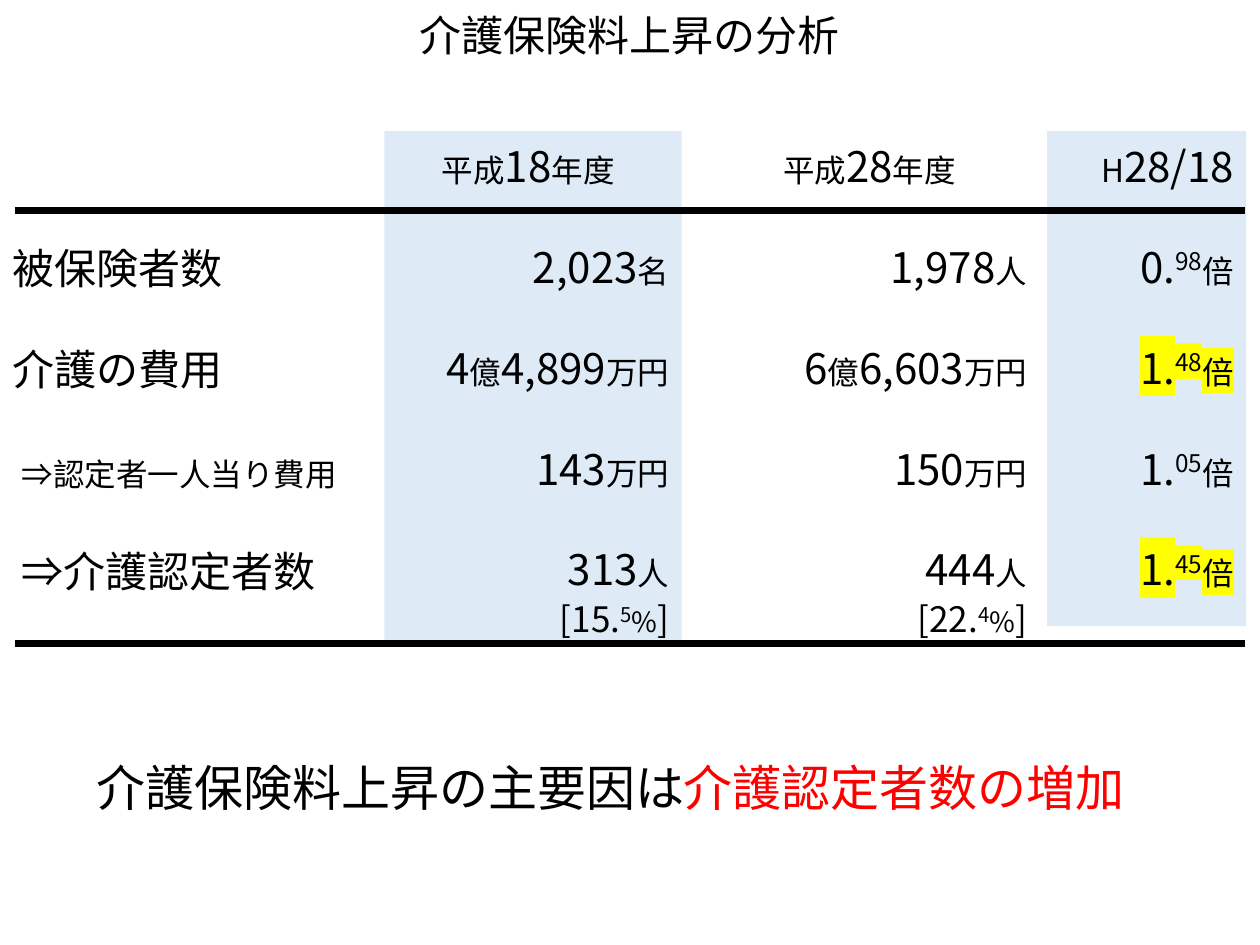
from lxml import etree
from pptx import Presentation
from pptx.dml.color import RGBColor
from pptx.enum import shapes, text
from pptx.oxml import ns
from pptx.util import Pt

BLACK = RGBColor(0, 0, 0)
RED = RGBColor(255, 0, 0)
BLUE = RGBColor(222, 235, 247)
YELLOW = RGBColor(255, 255, 0)
LEFT, MID, RIGHT = text.PP_ALIGN.LEFT, text.PP_ALIGN.CENTER, text.PP_ALIGN.RIGHT
BIG, SMALL = 24, 18


class Page:
    font = "Noto Sans CJK JP"
    lead = 28.8

    def __init__(self, slide):
        self.slide = slide

    def run(self, par, words, size, color=BLACK, mark=None, base=0):
        run = par.add_run()
        run.text = words
        run.font.size = Pt(size)
        run.font.color.rgb = color
        run.font.name = self.font
        props = run._r.get_or_add_rPr()
        east = etree.Element(ns.qn("a:ea"), typeface=self.font)
        props.find(ns.qn("a:latin")).addnext(east)
        if base:
            props.set("baseline", str(base * 1000))
        if mark:
            high = etree.Element(ns.qn("a:highlight"))
            etree.SubElement(high, ns.qn("a:srgbClr"), val=str(mark))
            props.find(ns.qn("a:solidFill")).addnext(high)

    def fill(self, shape, rows, align=LEFT, lead=lead):
        frame = shape.text_frame
        frame.word_wrap = True
        frame.auto_size = text.MSO_AUTO_SIZE.NONE
        frame.vertical_anchor = text.MSO_ANCHOR.TOP
        frame.margin_left = frame.margin_right = Pt(7.2)
        frame.margin_top, frame.margin_bottom = Pt(5.5), Pt(0)
        for i, runs in enumerate(rows):
            par = frame.paragraphs[0] if i == 0 else frame.add_paragraph()
            par.alignment = align
            par.line_spacing = Pt(lead)
            par.space_before = Pt(lead if i else 0)
            for item in runs:
                self.run(par, *item)
        return frame

    def title(self, box, words):
        shape = self.slide.shapes.title
        shape.left, shape.top, shape.width, shape.height = map(Pt, box)
        self.fill(shape, [[(words, BIG)]], MID)

    def label(self, box, rows, lead=lead):
        self.fill(self.slide.shapes.add_textbox(*map(Pt, box)), rows, lead=lead)

    def column(self, box, rows, head=MID, shade=None, share=None):
        if shade:
            shape = self.slide.shapes.add_shape(
                shapes.MSO_SHAPE.RECTANGLE, *map(Pt, box))
            shape.shadow.inherit = False
            shape.fill.solid()
            shape.fill.fore_color.rgb = shade
            shape.line.fill.background()
        else:
            shape = self.slide.shapes.add_textbox(*map(Pt, box))
        frame = self.fill(shape, rows, RIGHT)
        frame.paragraphs[0].alignment = head
        if share:
            whole, part = share
            par = frame.add_paragraph()
            par.alignment = RIGHT
            par.line_spacing = Pt(26)
            self.run(par, f"[{whole}.", 20)
            self.run(par, part, 20, base=30)
            self.run(par, "%", 16)
            self.run(par, "]", 20)

    def rule(self, y):
        line = self.slide.shapes.add_connector(
            shapes.MSO_CONNECTOR.STRAIGHT, Pt(8.64), Pt(y), Pt(711.36), Pt(y))
        line.line.color.rgb = BLACK
        line.line.width = Pt(4)
        etree.SubElement(line._element.spPr, ns.qn("a:effectLst"))


def year(num, tail="年度"):
    return [("平成", SMALL), (num, BIG), (tail, SMALL)]


def count(*parts):
    return [(part, BIG if i % 2 == 0 else SMALL) for i, part in enumerate(parts)]


def ratio(part, whole="1.", mark=None):
    return [(whole, BIG, BLACK, mark), (part, BIG, BLACK, mark, 30),
            ("倍", SMALL, BLACK, mark)]


def main():
    deck = Presentation()
    deck.slide_width, deck.slide_height = Pt(720), Pt(540)
    page = Page(deck.slides.add_slide(deck.slide_layouts[5]))
    top = 74.88

    page.title((0, 0, 720, 36), "介護保険料上昇の分析")
    page.label((0, 133.2, 216, 211), [
        [("被保険者数", BIG)],
        [("介護の費用", BIG)],
        [(" ", BIG), ("⇒認定者一人当り費用", SMALL)],
        [(" ⇒介護認定者数", BIG)],
    ])
    page.column((399.6, top, 194.4, 298), [
        year("28"),
        count("1,978", "人"),
        count("6", "億", "6,603", "万円"),
        count("150", "万円"),
        count("444", "人"),
    ], share=("22", "4"))
    page.column((598.32, top, 113.76, 283), [
        [("H", SMALL), ("28/18", BIG)],
        ratio("98", "0."),
        ratio("48", mark=YELLOW),
        ratio("05"),
        ratio("45", mark=YELLOW),
    ], head=RIGHT, shade=BLUE)
    page.column((219.6, top, 169.92, 293), [
        year("18") + [(" ", BIG)],
        count("2,023", "名"),
        count("4", "億", "4,899", "万円"),
        count("143", "万円"),
        count("313", "人"),
    ], shade=BLUE, share=("15", "5"))
    for y in (120.24, 367.92):
        page.rule(y)
    page.label((48.24, 427.68, 622.8, 41), [
        [("介護保険料上昇の主要因は", 28), ("介護認定者数の増加", 28, RED)],
    ], lead=33.6)
    deck.save("out.pptx")


if __name__ == "__main__":
    main()
